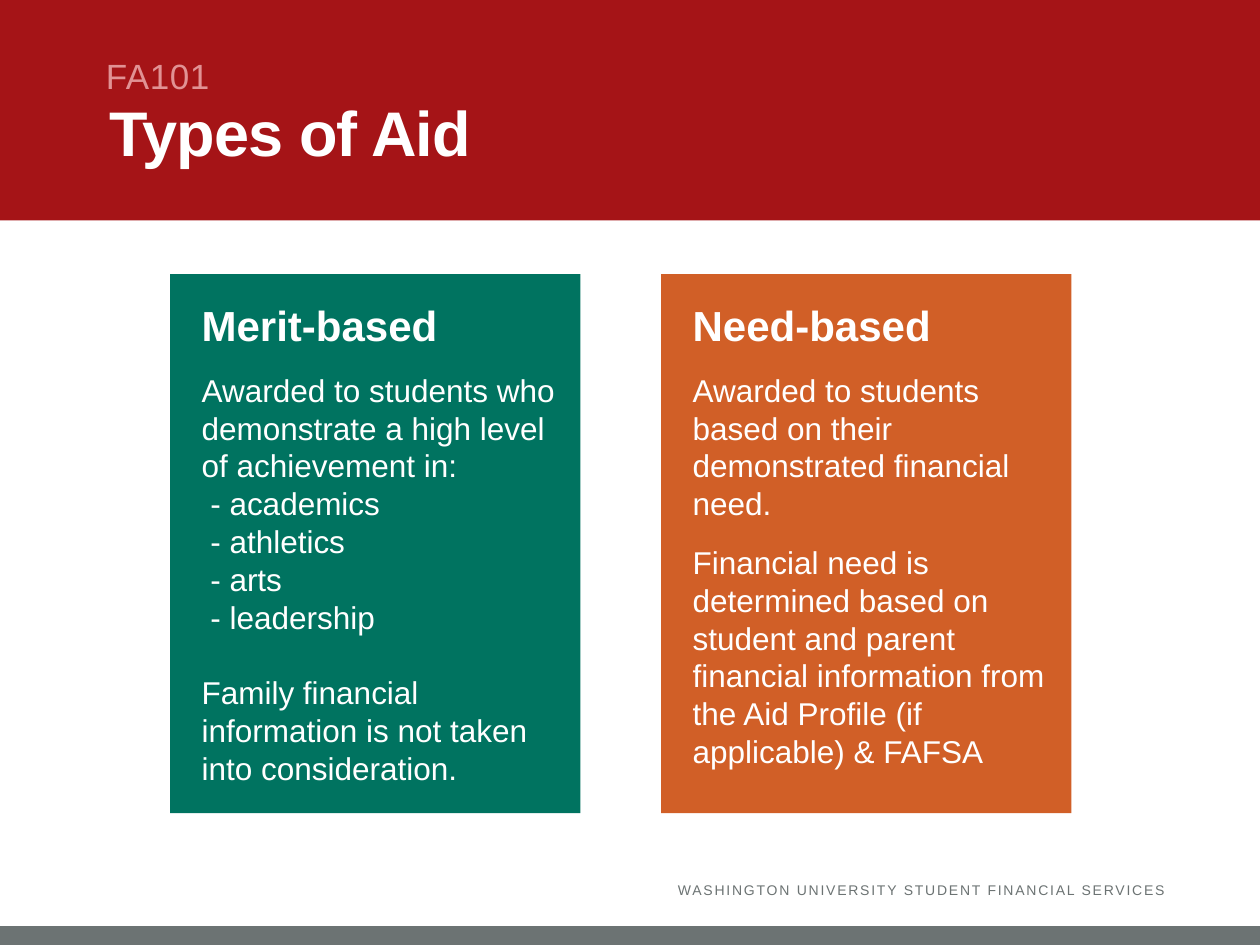
from pptx import Presentation
from pptx.dml.color import RGBColor
from pptx.enum.shapes import MSO_SHAPE
from pptx.enum.text import MSO_ANCHOR, PP_ALIGN
from pptx.util import Pt

RECTANGLE = MSO_SHAPE.RECTANGLE
TOP, MIDDLE = MSO_ANCHOR.TOP, MSO_ANCHOR.MIDDLE
LEFT, RIGHT = PP_ALIGN.LEFT, PP_ALIGN.RIGHT

WHITE, RED, PINK = "FFFFFF", "A51417", "E19294"
GRAY, GREEN, ORANGE = "6C7373", "007360", "D15F27"
FONT = "Arial"
CARD_INSETS = (18, 14.4, 14.4, 3.6)

MERIT = [
    ("Awarded to students who demonstrate a high level of achievement in:", {}),
    ("- academics", {"indent": 5}),
    ("- athletics", {"indent": 5}),
    ("- arts", {"indent": 5}),
    ("- leadership", {"indent": 5, "after": 21.5}),
    ("Family financial information is not taken into consideration.", {}),
]
NEED = [
    ("Awarded to students based on their demonstrated financial need.",
     {"after": 12}),
    ("Financial need is determined based on student and parent financial "
     "information from the Aid Profile (if applicable) & FAFSA", {}),
]


def color(hex_string):
    return RGBColor.from_string(hex_string)


def set_frame(box, insets, anchor=TOP):
    frame = box.text_frame
    frame.word_wrap = True
    frame.vertical_anchor = anchor
    (frame.margin_left, frame.margin_top,
     frame.margin_right, frame.margin_bottom) = map(Pt, insets)
    return frame


def add_text(frame, text, size=18, fill=WHITE, bold=False, align=LEFT,
             line=1.0, after=0, indent=0, tracking=0):
    """Write one paragraph, filling the frame's empty first one if unused."""
    first = frame.paragraphs[0]
    para = frame.add_paragraph() if first.runs else first
    if indent:
        para._p.get_or_add_pPr().set("marL", str(Pt(indent)))
    para.alignment = align
    para.line_spacing = line
    para.space_after = Pt(after)
    span = para.add_run()
    span.text = text
    span.font.name = FONT
    span.font.size = Pt(size)
    span.font.bold = bold
    span.font.color.rgb = color(fill)
    if tracking:
        span._r.get_or_add_rPr().set("spc", str(round(tracking * 100)))


def add_block(page, left, top, width, height, fill):
    block = page.shapes.add_shape(
        RECTANGLE, Pt(left), Pt(top), Pt(width), Pt(height))
    block.shadow.inherit = False
    block.fill.solid()
    block.fill.fore_color.rgb = color(fill)
    block.line.fill.background()
    return block


def add_label(page, text, left, top, width, height, insets, anchor=TOP,
              **text_format):
    box = page.shapes.add_textbox(Pt(left), Pt(top), Pt(width), Pt(height))
    add_text(set_frame(box, insets, anchor), text, **text_format)


def add_card(page, left, fill, heading, body):
    card = add_block(page, left, 156.7, 234.5, 308, fill)
    frame = set_frame(card, CARD_INSETS)
    add_text(frame, heading, size=24, bold=True, after=12)
    for text, text_format in body:
        add_text(frame, text, **text_format)


def main():
    deck = Presentation()
    deck.slide_width, deck.slide_height = Pt(720), Pt(540)
    page = deck.slides.add_slide(deck.slide_layouts[6])

    # Header and footer bands
    add_block(page, 0, 0, 720, 126, RED)
    add_block(page, 0, 529.2, 720, 10.8, GRAY)
    add_label(page, "WASHINGTON UNIVERSITY STUDENT FINANCIAL SERVICES",
              360, 494, 306, 29, (0, 0, 0, 0), MIDDLE,
              size=8, fill=GRAY, align=RIGHT, tracking=1)

    # The two types of aid
    add_card(page, 97.2, GREEN, "Merit-based", MERIT)
    add_card(page, 377.8, ORANGE, "Need-based", NEED)

    # Title and the line above it
    add_label(page, "Types of Aid", 59, 58.3, 602, 67, (3.6, 3.6, 7.2, 3.6),
              size=36, bold=True, line=0.8, tracking=-0.5)
    add_label(page, "FA101", 54, 30.2, 612, 26.6, (6.5, 3.6, 7.2, 3.6),
              size=20, fill=PINK, line=0.9, tracking=0.3)

    deck.save("out.pptx")


if __name__ == "__main__":
    main()
